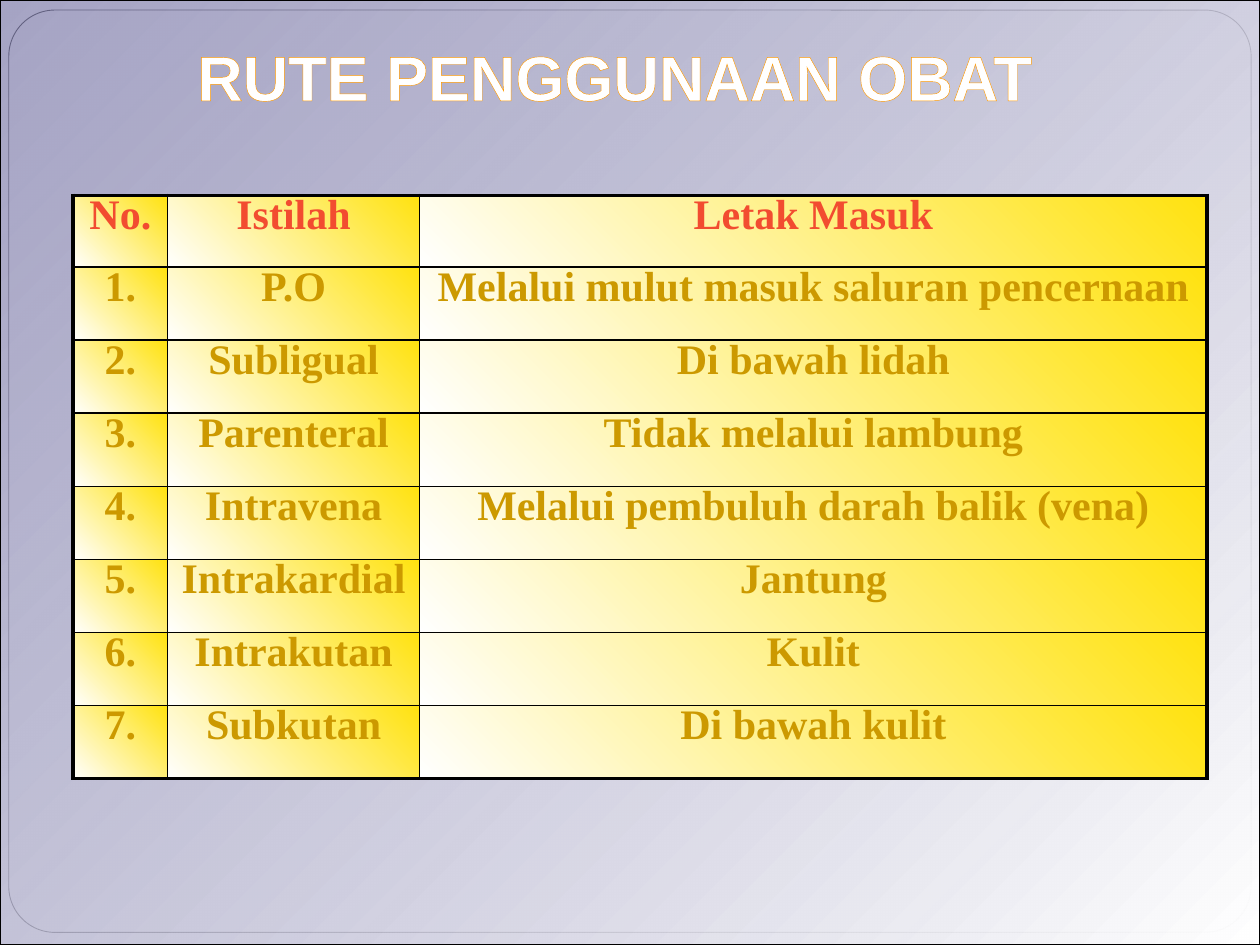
"""Build the slide listing drug administration routes in a table."""
import pptx
import pptx.dml.color
import pptx.enum.shapes
import pptx.enum.text
import pptx.oxml
import pptx.oxml.ns
import pptx.util

Inches, Pt = pptx.util.Inches, pptx.util.Pt
RGBColor = pptx.dml.color.RGBColor
SHAPE = pptx.enum.shapes.MSO_SHAPE
CENTER = pptx.enum.text.PP_ALIGN.CENTER
TOP = pptx.enum.text.MSO_ANCHOR.TOP

TITLE = "RUTE PENGGUNAAN OBAT"
HEADER = ("No.", "Istilah", "Letak Masuk")
ROUTES = [
    ("P.O", "Melalui mulut masuk saluran pencernaan"),
    ("Subligual", "Di bawah lidah"),
    ("Parenteral", "Tidak melalui lambung"),
    ("Intravena", "Melalui pembuluh darah balik (vena)"),
    ("Intrakardial", "Jantung"),
    ("Intrakutan", "Kulit"),
    ("Subkutan", "Di bawah kulit"),
]
ROWS = [HEADER] + [(f"{n}.", *route) for n, route in enumerate(ROUTES, 1)]
COLUMN_WIDTHS = (0.75, 2, 6.25)
HEADER_HEIGHT, ROW_HEIGHT = 0.57, 0.58

WHITE = RGBColor(0xFF, 0xFF, 0xFF)
BLACK = RGBColor(0, 0, 0)
LAVENDER = RGBColor(0x85, 0x83, 0xAF)
YELLOW = RGBColor(0xFF, 0xE2, 0x0F)
RED = RGBColor(0xF2, 0x4C, 0x30)
GOLD = RGBColor(0xCC, 0x99, 0x00)
ORANGE = RGBColor(0xFF, 0x99, 0x00)

TITLE_FONT = {"name": "Arial", "size": Pt(36), "bold": True}
CELL_FONT = {"name": "Times New Roman", "size": Pt(24), "bold": True}
TITLE_FRAME = {"word_wrap": False, "vertical_anchor": TOP,
               "auto_size": pptx.enum.text.MSO_AUTO_SIZE.NONE}
TITLE_BOX = {"left": Inches(1.42), "top": Inches(0.25),
             "width": Inches(6.92), "height": Inches(0.62)}
PLAIN_TABLE = {"first_row": False, "horz_banding": False}


def set_all(target, values):
    for name, value in values.items():
        setattr(target, name, value)


def parse(tag, attributes, content):
    ns = pptx.oxml.ns.nsdecls("a")
    return pptx.oxml.parse_xml(f"<a:{tag} {ns} {attributes}>{content}</a:{tag}>")


def outline(tag, color, points):
    return parse(tag, f'w="{Pt(points)}"',
                 f'<a:solidFill><a:srgbClr val="{color}"/></a:solidFill>')


def gradient(fill, colors, angle):
    fill.gradient()
    fill.gradient_angle = angle
    for stop, color, position in zip(fill.gradient_stops, colors, (0, 1)):
        stop.color.rgb = color
        stop.position = position


def add_panel(s, kind, box, points):
    sp = s.shapes.add_shape(kind, *map(Inches, box))
    sp.shadow.inherit = False
    sp.line.color.rgb = BLACK
    sp.line.width = Pt(points)
    return sp


def add_run(tf, text, font, color):
    p = tf.paragraphs[0]
    p.alignment = CENTER
    r = p.add_run()
    r.text = text
    set_all(r.font, font)
    r.font.color.rgb = color
    return p, r


def add_background(s):
    frame = add_panel(s, SHAPE.ROUNDED_RECTANGLE, (0.07, 0.08, 9.86, 7.32), 0.5)
    frame.adjustments[0] = 0.05
    frame.fill.solid()
    frame.fill.fore_color.rgb = WHITE
    wash = add_panel(s, SHAPE.RECTANGLE, (0, 0, 10, 7.5), 0.75)
    gradient(wash.fill, (LAVENDER, WHITE), 315)
    first_color = wash._element.spPr.find(".//" + pptx.oxml.ns.qn("a:srgbClr"))
    first_color.append(parse("alpha", 'val="73000"', ""))


def add_title(s):
    title = s.shapes.title
    set_all(title, TITLE_BOX)
    set_all(title.text_frame, TITLE_FRAME)
    p, r = add_run(title.text_frame, TITLE, TITLE_FONT, WHITE)
    r.font._element.insert(0, outline("ln", ORANGE, 0.75))
    s.shapes._spTree.append(title._element)


def format_cell(cell, text, color, edges):
    p, r = add_run(cell.text_frame, text, CELL_FONT, color)
    p.line_spacing = 0.75
    p._p.get_or_add_pPr().append(parse("spcBef", "", '<a:spcPct val="20000"/>'))
    gradient(cell.fill, (WHITE, YELLOW), 45)
    tc_pr = cell._tc.get_or_add_tcPr()
    for i, (side, outer) in enumerate(edges.items()):
        tc_pr.insert(i, outline(side, BLACK, 2.25 if outer else 1))


def add_routes_table(s):
    height = HEADER_HEIGHT + ROW_HEIGHT * len(ROUTES)
    box = map(Inches, (0.58, 1.55, sum(COLUMN_WIDTHS), height))
    table = s.shapes.add_table(len(ROWS), len(HEADER), *box).table
    set_all(table, PLAIN_TABLE)
    for column, width in zip(table.columns, COLUMN_WIDTHS):
        column.width = Inches(width)
    last_row, last_column = len(ROWS) - 1, len(HEADER) - 1
    for i, row in enumerate(ROWS):
        table.rows[i].height = Inches(ROW_HEIGHT if i else HEADER_HEIGHT)
        for j, text in enumerate(row):
            edges = {"lnL": j == 0, "lnR": j == last_column,
                     "lnT": i == 0, "lnB": i == last_row}
            format_cell(table.cell(i, j), text, GOLD if i else RED, edges)


def main():
    prs = pptx.Presentation()
    prs.slide_width, prs.slide_height = Inches(10), Inches(7.5)
    s = prs.slides.add_slide(prs.slide_layouts[5])
    add_background(s)
    add_title(s)
    add_routes_table(s)
    prs.save("out.pptx")


if __name__ == "__main__":
    main()
